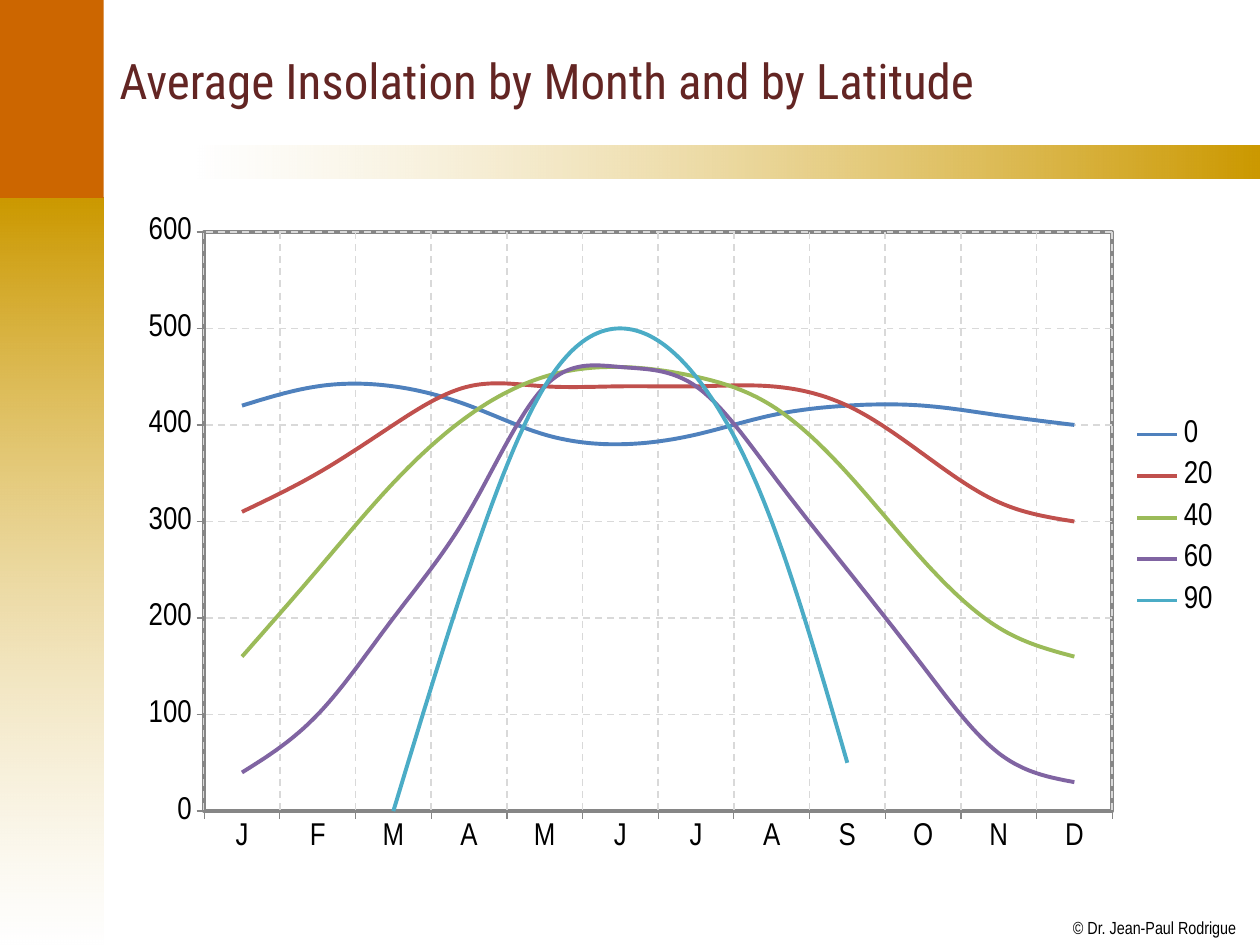
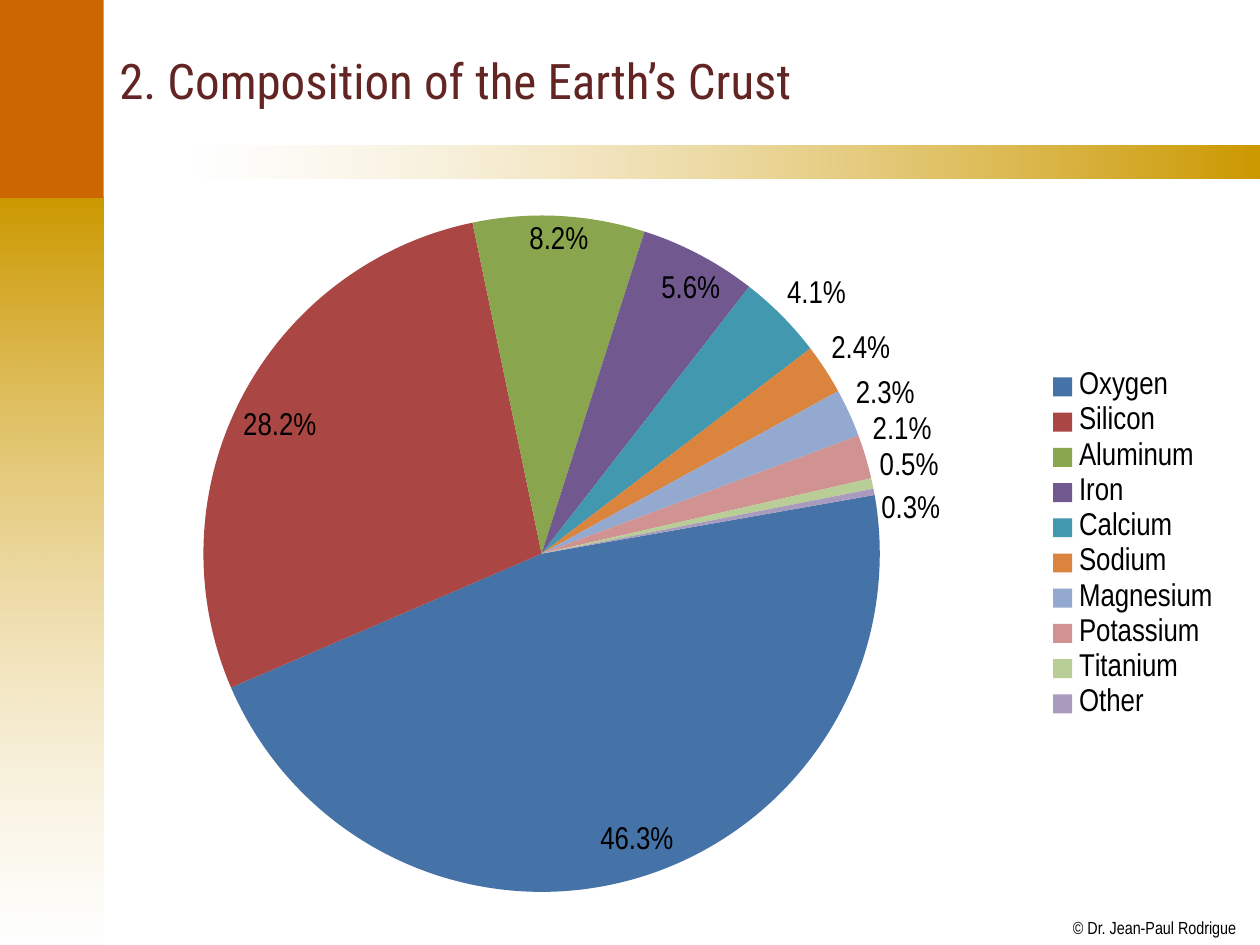
from lxml.etree import SubElement
from pptx import Presentation
from pptx.chart.data import CategoryChartData
from pptx.dml.color import RGBColor
from pptx.enum.chart import XL_CHART_TYPE, XL_LABEL_POSITION, XL_LEGEND_POSITION, XL_TICK_MARK
from pptx.enum.dml import MSO_LINE
from pptx.enum.shapes import MSO_SHAPE
from pptx.enum.text import MSO_ANCHOR, MSO_AUTO_SIZE, PP_ALIGN
from pptx.oxml.ns import qn
from pptx.util import Cm, Pt

INSOLATION_TITLE = "Average Insolation by Month and by Latitude"
MONTHS = list("JFMAMJJASOND")
INSOLATION = {
    "0": [420, 440, 440, 420, 390, 380, 390, 410, 420, 420, 410, 400],
    "20": [310, 350, 400, 440, 440, 440, 440, 440, 420, 370, 320, 300],
    "40": [160, 250, 340, 410, 450, 460, 450, 420, 350, 260, 190, 160],
    "60": [40, 100, 200, 310, 440, 460, 440, 350, 250, 150, 60, 30],
    "90": [None, None, 0, 250, 440, 500, 450, 300, 50, None, None, None],
}
CRUST_TITLE = "2. Composition of the Earth’s Crust"
CRUST = {
    "Oxygen": 0.463, "Silicon": 0.282, "Aluminum": 0.082, "Iron": 0.056,
    "Calcium": 0.041, "Sodium": 0.024, "Magnesium ": 0.023,
    "Potassium": 0.021, "Titanium": 0.005, "Other": 0.003,
}
COPYRIGHT = "© Dr. Jean-Paul Rodrigue"

GOLD = RGBColor(0xCC, 0x99, 0x00)
ORANGE = RGBColor(0xCC, 0x66, 0x00)
MAROON = RGBColor(0x63, 0x25, 0x23)
WHITE = RGBColor(0xFF, 0xFF, 0xFF)
BLACK = RGBColor(0x00, 0x00, 0x00)
GRID_GREY = RGBColor(0xD9, 0xD9, 0xD9)
AXIS_GREY = RGBColor(0x86, 0x86, 0x86)
LATITUDE_COLORS = [RGBColor.from_string(code) for code in
                   "4F81BD C0504D 9BBB59 8064A2 4BACC6".split()]
ELEMENT_COLORS = [RGBColor.from_string(code) for code in
                  "4572A7 AA4643 89A54E 71588F 4198AF DB843D 93A9CF D19392 B9CD96 A99BBD".split()]
TITLE_FONT, BODY_FONT = "Roboto Condensed", "Arial Narrow"

SIDE_WIDTH, SIDE_SPLIT = 2.09, 3.99
SLIDE_WIDTH, SLIDE_HEIGHT = 25.4, 19.05


def write(frame, text, *, size, font, color, anchor=MSO_ANCHOR.TOP, wrap=True):
    """Put one left-aligned paragraph into a text frame."""
    frame.text = text
    frame.auto_size = MSO_AUTO_SIZE.NONE
    frame.word_wrap, frame.vertical_anchor = wrap, anchor
    line = frame.paragraphs[0]
    line.alignment = PP_ALIGN.LEFT
    line.font.size, line.font.name, line.font.color.rgb = Pt(size), font, color


def add_band(slide, box, colors, angle=0):
    """Draw a borderless rectangle, plain or fading into half-clear white."""
    band = slide.shapes.add_shape(MSO_SHAPE.RECTANGLE, *map(Cm, box))
    band.shadow.inherit = False
    band.line.fill.background()
    if len(colors) == 1:
        band.fill.solid()
        band.fill.fore_color.rgb = colors[0]
        return
    band.fill.gradient()
    band.fill.gradient_angle = angle
    for stop, color in zip(band.fill.gradient_stops, colors):
        stop.color.rgb = color
    for tint in band._element.iter(qn("a:srgbClr")):
        if tint.get("val") == str(WHITE):
            SubElement(tint, qn("a:alpha"), val="50000")


def add_themed_slide(deck, title):
    """Add a slide with the bands, title and copyright line."""
    slide = deck.slides.add_slide(deck.slide_layouts[5])
    add_band(slide, (0, SIDE_SPLIT, SIDE_WIDTH, SLIDE_HEIGHT - SIDE_SPLIT), (GOLD, WHITE), 270)
    add_band(slide, (SIDE_SPLIT, 2.93, SLIDE_WIDTH - SIDE_SPLIT, 0.67), (WHITE, GOLD))
    add_band(slide, (0, 0, SIDE_WIDTH, SIDE_SPLIT), (ORANGE,))
    heading = slide.shapes.title
    heading.left, heading.top, heading.width, heading.height = map(Cm, (2.15, 0.3, 22.81, 2.64))
    write(heading.text_frame, title, size=28, font=TITLE_FONT, color=MAROON,
          anchor=MSO_ANCHOR.MIDDLE)
    credit = slide.shapes.add_textbox(*map(Cm, (21.63, 18.49, 3.3, 0.43))).text_frame
    credit.margin_left = credit.margin_top = credit.margin_right = credit.margin_bottom = 0
    write(credit, COPYRIGHT, size=10, font=BODY_FONT, color=BLACK, wrap=False)
    return slide


def place(layout, box, target=None):
    """Fix a chart part at fractions of the chart's width and height."""
    manual = SubElement(layout, qn("c:manualLayout"))
    settings = [("layoutTarget", target)] if target else []
    settings += [("xMode", "edge"), ("yMode", "edge"), *zip("xywh", box)]
    for tag, value in settings:
        SubElement(manual, qn(f"c:{tag}"), val=str(value))


def add_themed_chart(slide, kind, box, categories, series, plot_box):
    """Add a chart with a right legend and a fixed inner plot area."""
    data = CategoryChartData()
    data.categories = categories
    for name, values in series.items():
        data.add_series(name, values)
    chart = slide.shapes.add_chart(kind, *map(Cm, box), data).chart
    chart.has_title = False
    chart.font.size, chart.font.name, chart.font.color.rgb = Pt(18), BODY_FONT, BLACK
    chart.has_legend = True
    chart.legend.position = XL_LEGEND_POSITION.RIGHT
    chart.legend.include_in_layout = False
    area = chart._chartSpace.chart.plotArea
    for layout in area.findall(qn("c:layout")):
        area.remove(layout)
    layout = SubElement(area, qn("c:layout"))
    area.insert(0, layout)
    place(layout, plot_box, "inner")
    return chart


def add_insolation(deck):
    """Build the slide with monthly insolation curves."""
    slide = add_themed_slide(deck, INSOLATION_TITLE)
    chart = add_themed_chart(slide, XL_CHART_TYPE.LINE, (2.37, 3.83, 22.38, 14.33),
                             MONTHS, INSOLATION, (0.078, 0.059, 0.818, 0.815))
    legend = chart._chartSpace.find(".//" + qn("c:legend"))
    for layout in legend.findall(qn("c:layout")):
        legend.remove(layout)
    layout = SubElement(legend, qn("c:layout"))
    legend.find(qn("c:legendPos")).addnext(layout)
    place(layout, (0.91, 0.306, 0.085, 0.31))
    for curve, color in zip(chart.plots[0].series, LATITUDE_COLORS):
        curve.smooth = True
        curve.format.line.width = Pt(2.25)
        curve.format.line.color.rgb = color
    for axis in (chart.category_axis, chart.value_axis):
        axis.major_tick_mark = XL_TICK_MARK.OUTSIDE
        axis.minor_tick_mark = XL_TICK_MARK.NONE
        axis.format.line.color.rgb = AXIS_GREY
        axis.has_major_gridlines = True
        grid = axis.major_gridlines.format.line
        grid.color.rgb, grid.width, grid.dash_style = GRID_GREY, Pt(1), MSO_LINE.DASH
    chart.value_axis.minimum_scale, chart.value_axis.maximum_scale = 0, 600
    chart.value_axis.major_unit = 100
    frame = SubElement(chart._chartSpace.chart.plotArea, qn("c:spPr"))
    SubElement(frame, qn("a:noFill"))
    border = SubElement(SubElement(frame, qn("a:ln"), w=str(Pt(2))), qn("a:solidFill"))
    SubElement(border, qn("a:srgbClr"), val=str(AXIS_GREY))


def add_crust(deck):
    """Build the slide with the crust composition pie."""
    slide = add_themed_slide(deck, CRUST_TITLE)
    chart = add_themed_chart(slide, XL_CHART_TYPE.PIE, (2.1, 3.64, 22.91, 14.71),
                             list(CRUST), {"Series 1": list(CRUST.values())},
                             (0.087, 0.048, 0.596, 0.927))
    pie = chart.plots[0]
    pie.vary_by_categories = True
    for index, color in enumerate(ELEMENT_COLORS):
        wedge = pie.series[0].points[index].format
        wedge.fill.solid()
        wedge.fill.fore_color.rgb = color
        wedge.line.fill.background()
    labels = pie.series[0].data_labels
    labels.show_value = True
    labels.number_format, labels.number_format_is_linked = "0.0%", False
    labels.position = XL_LABEL_POSITION.BEST_FIT
    pie_xml = chart._chartSpace.find(".//" + qn("c:pieChart"))
    for angle in pie_xml.findall(qn("c:firstSliceAng")):
        pie_xml.remove(angle)
    SubElement(pie_xml, qn("c:firstSliceAng"), val="80")


def main():
    """Build and save the deck."""
    deck = Presentation()
    deck.slide_width, deck.slide_height = Cm(SLIDE_WIDTH), Cm(SLIDE_HEIGHT)
    add_insolation(deck)
    add_crust(deck)
    deck.save("out.pptx")


if __name__ == "__main__":
    main()
